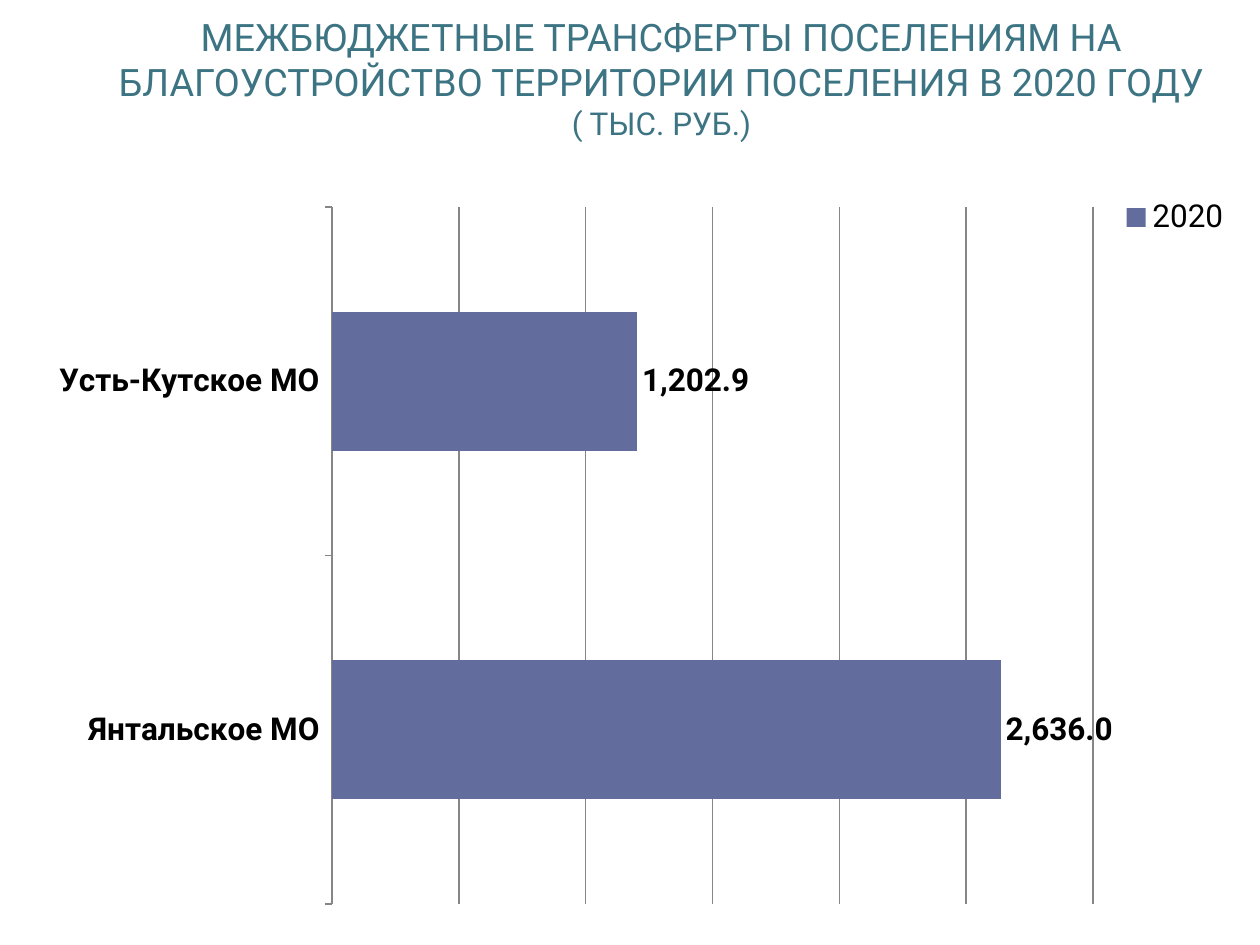
"""Builds a slide with a bar chart of transfers to settlements in 2020."""
from dataclasses import dataclass
from typing import Any

from lxml.etree import SubElement
from pptx import Presentation
from pptx.chart.data import CategoryChartData
from pptx.dml.color import RGBColor
from pptx.enum.chart import XL_CHART_TYPE as ChartType
from pptx.enum.chart import XL_LABEL_POSITION as LabelPosition
from pptx.enum.chart import XL_LEGEND_POSITION as LegendPosition
from pptx.enum.chart import XL_TICK_LABEL_POSITION as TickLabelPosition
from pptx.enum.chart import XL_TICK_MARK as TickMark
from pptx.enum.text import MSO_ANCHOR as Anchor
from pptx.enum.text import MSO_AUTO_SIZE as AutoSize
from pptx.enum.text import PP_ALIGN as Align
from pptx.oxml.ns import qn
from pptx.util import Emu, Pt

PX = 914400 // 126


@dataclass(frozen=True)
class Theme:
    """Colours, font and type sizes of the slide."""
    font: str = "Roboto"
    title: RGBColor = RGBColor(0x3C, 0x74, 0x83)
    text: RGBColor = RGBColor(0, 0, 0)
    bar: RGBColor = RGBColor(0x63, 0x6D, 0x9D)
    grid: RGBColor = RGBColor(0x86, 0x86, 0x86)
    title_size: float = 21.6
    body_size: float = 18
    number_format: str = "#,##0.0"


@dataclass(frozen=True)
class Box:
    """A rectangle in px."""
    left: int
    top: int
    width: int
    height: int

    def emu(self) -> tuple[Emu, ...]:
        """Returns the rectangle in EMU."""
        return tuple(Emu(side * PX) for side in
                     (self.left, self.top, self.width, self.height))


@dataclass(frozen=True)
class Transfer:
    """The amount given to one settlement."""
    settlement: str
    amount: float


THEME = Theme()
TITLE_BOX = Box(63, 0, 1197, 155)
CHART_BOX = Box(35, 193, 1211, 727)
PLOT_BOX = Box(332, 207, 761, 697)
LEGEND_BOX = Box(1120, 199, 110, 37)
TITLE_LINES = (
    ("МЕЖБЮДЖЕТНЫЕ ТРАНСФЕРТЫ ПОСЕЛЕНИЯМ НА БЛАГОУСТРОЙСТВО "
     "ТЕРРИТОРИИ ПОСЕЛЕНИЯ В 2020 ГОДУ", THEME.title_size),
    ("( ТЫС. РУБ.)", THEME.body_size),
)
TRANSFERS = (Transfer("Янтальское МО", 2636), Transfer("Усть-Кутское МО", 1202.9))


def apply(target: Any, **values: Any) -> None:
    """Sets the given attributes on an object."""
    for name, value in values.items():
        setattr(target, name, value)


def style_font(font: Any, size: float, color: RGBColor, bold: bool = False) -> None:
    """Formats a font in the theme's typeface."""
    apply(font, name=THEME.font, size=Pt(size), bold=bold)
    font.color.rgb = color


def place_in_chart(element: Any, box: Box, position: int, inner: bool = False) -> None:
    """Gives a chart part a fixed place as fractions of the chart."""
    for layout in element.findall(qn("c:layout")):
        element.remove(layout)
    layout = SubElement(element, qn("c:layout"))
    element.insert(position, layout)
    manual = SubElement(layout, qn("c:manualLayout"))
    settings = {"layoutTarget": "inner"} if inner else {}
    settings |= {
        "xMode": "edge",
        "yMode": "edge",
        "x": round((box.left - CHART_BOX.left) / CHART_BOX.width, 4),
        "y": round((box.top - CHART_BOX.top) / CHART_BOX.height, 4),
        "w": round(box.width / CHART_BOX.width, 4),
        "h": round(box.height / CHART_BOX.height, 4),
    }
    for name, value in settings.items():
        SubElement(manual, qn(f"c:{name}")).set("val", str(value))


def draw_title(slide: Any) -> None:
    """Fills and places the title placeholder."""
    title = slide.shapes.title
    title.left, title.top, title.width, title.height = TITLE_BOX.emu()
    frame = title.text_frame
    apply(frame, word_wrap=True, auto_size=AutoSize.NONE, vertical_anchor=Anchor.MIDDLE)
    paragraph = frame.paragraphs[0]
    paragraph.alignment = Align.CENTER
    for index, (text, size) in enumerate(TITLE_LINES):
        if index:
            paragraph.add_line_break()
        run = paragraph.add_run()
        run.text = text
        style_font(run.font, size, THEME.title)


def format_axes(chart: Any) -> None:
    """Formats the category axis and the gridlines of the hidden value axis."""
    category_axis, value_axis = chart.category_axis, chart.value_axis
    apply(category_axis, major_tick_mark=TickMark.OUTSIDE,
          tick_label_position=TickLabelPosition.LOW)
    style_font(category_axis.tick_labels.font, THEME.body_size, THEME.text, bold=True)
    apply(value_axis, visible=False, has_major_gridlines=True,
          minimum_scale=0, maximum_scale=3000, major_unit=500)
    apply(value_axis.tick_labels, number_format=THEME.number_format,
          number_format_is_linked=False)
    for line in (category_axis.format.line, value_axis.major_gridlines.format.line):
        line.color.rgb = THEME.grid
        line.width = Pt(0.75)


def format_bars(plot: Any) -> None:
    """Formats the bars and their value labels."""
    apply(plot, gap_width=150, vary_by_categories=False, has_data_labels=True)
    fill = plot.series[0].format.fill
    fill.solid()
    fill.fore_color.rgb = THEME.bar
    labels = plot.data_labels
    apply(labels, show_value=True, position=LabelPosition.OUTSIDE_END,
          number_format=THEME.number_format, number_format_is_linked=False)
    style_font(labels.font, THEME.body_size, THEME.text, bold=True)


def draw_chart(slide: Any) -> None:
    """Adds the bar chart of transfers."""
    data = CategoryChartData(number_format=THEME.number_format)
    data.categories = [transfer.settlement for transfer in TRANSFERS]
    data.add_series("2020", [transfer.amount for transfer in TRANSFERS])
    chart = slide.shapes.add_chart(
        ChartType.BAR_CLUSTERED, *CHART_BOX.emu(), data).chart
    apply(chart, has_title=False, has_legend=True)
    style_font(chart.font, THEME.body_size, THEME.text)
    apply(chart.legend, position=LegendPosition.RIGHT, include_in_layout=False)
    style_font(chart.legend.font, THEME.body_size, THEME.text)
    format_axes(chart)
    format_bars(chart.plots[0])
    plot_area, = chart.element.xpath(".//c:plotArea")
    legend, = chart.element.xpath(".//c:legend")
    place_in_chart(plot_area, PLOT_BOX, 0, inner=True)
    place_in_chart(legend, LEGEND_BOX, 1)


def main() -> None:
    """Builds and saves the presentation."""
    presentation = Presentation()
    apply(presentation, slide_width=Emu(1260 * PX), slide_height=Emu(945 * PX))
    slide = presentation.slides.add_slide(presentation.slide_layouts[5])
    draw_title(slide)
    draw_chart(slide)
    presentation.save("out.pptx")


if __name__ == "__main__":
    main()
